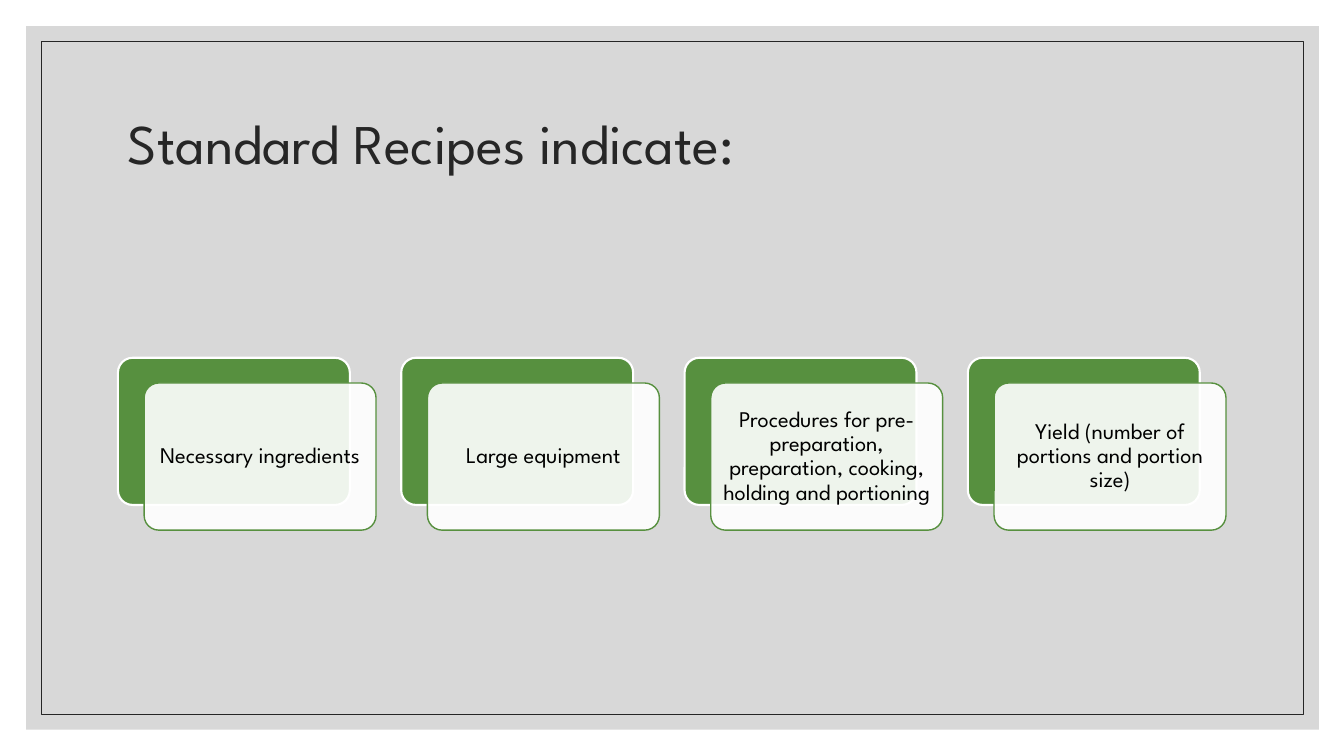
from lxml import etree
from pptx import Presentation
from pptx.dml.color import RGBColor
from pptx.enum import shapes, text
from pptx.oxml.ns import qn
from pptx.util import Inches, Pt

FONT = "League Spartan"
GREEN, WHITE, INK = "57903F", "FFFFFF", "262626"


def add_panel(kind, box, fill=None, opacity=100, line=None, width=1):
    """Add a shadowless shape; box is left, top, width, height in inches."""
    panel = slide.shapes.add_shape(kind, *map(Inches, box))
    panel.shadow.inherit = False
    if fill:
        panel.fill.solid()
        panel.fill.fore_color.rgb = RGBColor.from_string(fill)
        if opacity < 100:
            color = panel.fill._xPr.find(qn("a:solidFill"))[0]
            etree.SubElement(color, qn("a:alpha"), val=str(opacity * 1000))
    else:
        panel.fill.background()
    if line:
        panel.line.color.rgb = RGBColor.from_string(line)
        panel.line.width = Pt(width)
    else:
        panel.line.fill.background()
    return panel


def write(shape, words, size, color, align):
    frame = shape.text_frame
    frame.word_wrap = True
    frame.vertical_anchor = text.MSO_ANCHOR.MIDDLE
    paragraph = frame.paragraphs[0]
    paragraph.text = words
    paragraph.alignment = align
    paragraph.line_spacing = 0.9
    paragraph.font.name = FONT
    paragraph.font.size = Pt(size)
    paragraph.font.color.rgb = RGBColor.from_string(color)


prs = Presentation()
prs.slide_width, prs.slide_height = Inches(13.33), Inches(7.5)
slide = prs.slides.add_slide(prs.slide_layouts[6])

rectangle = shapes.MSO_SHAPE.RECTANGLE
add_panel(rectangle, (0.26, 0.26, 12.82, 6.98), fill="BFBFBF", opacity=60)
add_panel(rectangle, (0.41, 0.41, 12.52, 6.68), line=INK, width=0.5)

title = slide.shapes.add_textbox(Inches(1.17), Inches(0.7), Inches(11), Inches(1.5))
write(title, "Standard Recipes indicate:", 40, INK, text.PP_ALIGN.LEFT)

contents = [
    "Necessary ingredients",
    "Large equipment",
    "Procedures for pre-preparation, preparation, cooking, holding and portioning",
    "Yield (number of portions and portion size)",
]
left, top, pitch = 1.17, 3.55, 2.81
card_width, card_height = 2.3, 1.46
shift_x, shift_y = 0.26, 0.25
rounded = shapes.MSO_SHAPE.ROUNDED_RECTANGLE

for i, content in enumerate(contents):
    x = left + i * pitch
    back = add_panel(rounded, (x, top, card_width, card_height),
                     fill=GREEN, line=WHITE, width=1.5)
    card = add_panel(rounded, (x + shift_x, top + shift_y, card_width, card_height),
                     fill=WHITE, opacity=90, line=GREEN)
    back.adjustments[0] = card.adjustments[0] = 0.1
    frame = card.text_frame
    frame.margin_left = frame.margin_right = Inches(0.07)
    frame.margin_top = frame.margin_bottom = Inches(0.07)
    write(card, content, 16, "000000", text.PP_ALIGN.CENTER)

prs.save("out.pptx")
